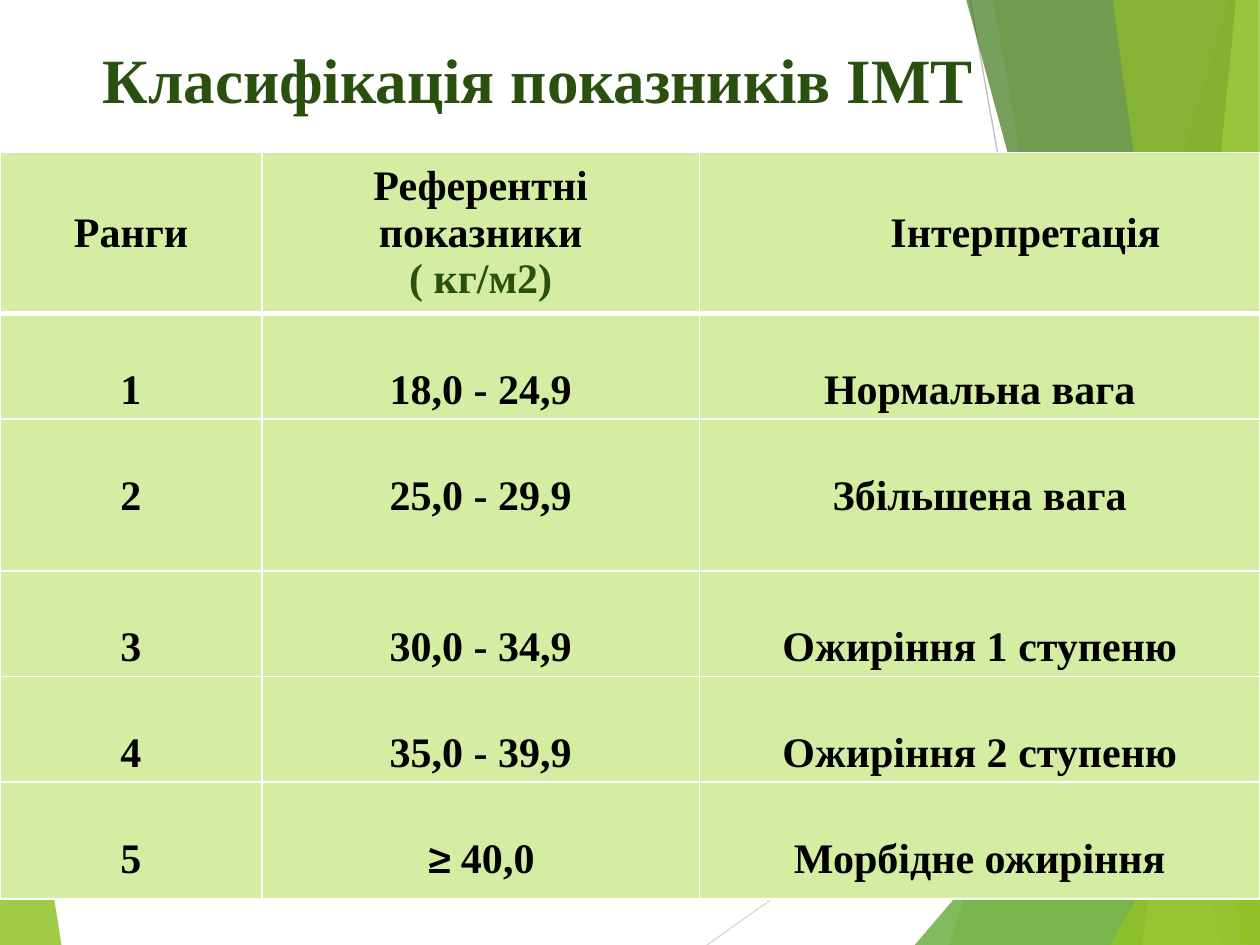
from lxml.etree import SubElement
from pptx import Presentation
from pptx.dml.color import RGBColor
from pptx.enum.shapes import MSO_CONNECTOR
from pptx.enum.text import MSO_ANCHOR, PP_ALIGN
from pptx.oxml.ns import qn
from pptx.util import Cm, Pt

# Content
TITLE = "Класифікація показників ІМТ"
ROWS = [
    ("Ранги", "Референтні показники\n( кг/м2)", "Інтерпретація"),
    ("1", "18,0 - 24,9", "Нормальна вага"),
    ("2", "25,0 - 29,9", "Збільшена вага"),
    ("3", "30,0 - 34,9", "Ожиріння 1 ступеню"),
    ("4", "35,0 - 39,9", "Ожиріння 2 ступеню"),
    ("5", "≥ 40,0", "Морбідне ожиріння"),
]

# Layout in centimetres
WIDTH, HEIGHT = 25.4, 19.05
TABLE_TOP = 3.07
COLUMN_WIDTHS = [5.28, 8.82, 11.3]
ROW_HEIGHTS = [3.06, 2.13, 3.06, 2.13, 2.13, 2.35]
FONT, DARK_GREEN, CELL_GREEN = "Times New Roman", "2A5010", "D5EDA2"

# Backdrop lines: colour, start, end
LINES = [
    ("D9D9D9", (14.25, HEIGHT), (WIDTH, 11.15)),
    ("BFBFBF", (19.56, 0), (22.96, HEIGHT)),
]
# Backdrop facets: colour, opacity in percent, corners
LOWER_RIGHT, UPPER_RIGHT = (WIDTH, HEIGHT), (WIDTH, 0)
LEFT_FACET = ("90C226", 85, [(0, 11.15), (1.24, HEIGHT), (0, HEIGHT)])
RIGHT_FACETS = [
    ("90C226", 30, [(24.77, 0), (19.15, HEIGHT), LOWER_RIGHT, UPPER_RIGHT]),
    ("90C226", 20, [(20.02, 0), (23.34, HEIGHT), LOWER_RIGHT, UPPER_RIGHT]),
    ("54A021", 72, [(18.44, HEIGHT), (WIDTH, 10.9), LOWER_RIGHT]),
    ("3F7819", 70, [(19.48, 0), (24.64, HEIGHT), LOWER_RIGHT, UPPER_RIGHT]),
    ("C0E474", 70, [(24.92, 0), (23.04, HEIGHT), LOWER_RIGHT, UPPER_RIGHT]),
    ("90C226", 65, [(22.43, 0), (25.04, HEIGHT), LOWER_RIGHT, (25.35, 0)]),
    ("90C226", 80, [(22.38, HEIGHT), (WIDTH, 13.59), LOWER_RIGHT]),
]


def color(value):
    return RGBColor.from_string(value)


def add_facet(page, fill, opacity, corners):
    points = [(round(x * 100), round(y * 100)) for x, y in corners]
    builder = page.shapes.build_freeform(*points[0], scale=Cm(0.01))
    builder.add_line_segments(points[1:], close=True)
    facet = builder.convert_to_shape()
    facet.shadow.inherit = False
    facet.line.fill.background()
    facet.fill.solid()
    facet.fill.fore_color.rgb = color(fill)
    tint = next(facet._element.spPr.iter(qn("a:srgbClr")))
    SubElement(tint, qn("a:alpha"), val=str(opacity * 1000))


def add_line(page, stroke, start, end):
    ends = [Cm(value) for value in start + end]
    line = page.shapes.add_connector(MSO_CONNECTOR.STRAIGHT, *ends)
    line.line.color.rgb = color(stroke)
    line.line.width = Pt(0.75)
    SubElement(line._element.spPr, qn("a:effectLst"))


def style_para(para, size, value):
    para.alignment = PP_ALIGN.CENTER
    para.font.name = FONT
    para.font.size = Pt(size)
    para.font.bold = True
    para.font.color.rgb = color(value)


def set_borders(cell, top, bottom):
    properties = cell._tc.get_or_add_tcPr()
    for side, width in (("L", 1), ("R", 1), ("T", top), ("B", bottom)):
        border = SubElement(properties, qn(f"a:ln{side}"), w=str(Pt(width)))
        SubElement(SubElement(border, qn("a:solidFill")),
                   qn("a:srgbClr"), val="FFFFFF")


def fill_cell(cell, text, row):
    set_borders(cell, 3 if row == 1 else 1, 3 if row == 0 else 1)
    cell.fill.solid()
    cell.fill.fore_color.rgb = color(CELL_GREEN)
    cell.vertical_anchor = MSO_ANCHOR.TOP if row else MSO_ANCHOR.MIDDLE
    cell.margin_top = Cm(1.08 if row else 0.1)
    cell.margin_bottom = Cm(0 if row else 0.1)
    cell.text = text
    for number, para in enumerate(cell.text_frame.paragraphs):
        style_para(para, 24, DARK_GREEN if number else "000000")


deck = Presentation()
deck.slide_width, deck.slide_height = Cm(WIDTH), Cm(HEIGHT)
page = deck.slides.add_slide(deck.slide_layouts[6])

# Backdrop
add_facet(page, *LEFT_FACET)
for line in LINES:
    add_line(page, *line)
for facet in RIGHT_FACETS:
    add_facet(page, *facet)

# Title
title_box = page.shapes.add_textbox(0, Cm(0.53), Cm(21.69), Cm(2.54))
title_frame = title_box.text_frame
title_frame.word_wrap = True
title_frame.margin_top = Cm(0.29)
title_frame.text = TITLE
style_para(title_frame.paragraphs[0], 36, DARK_GREEN)

# Table
table = page.shapes.add_table(
    len(ROWS), len(COLUMN_WIDTHS), 0, Cm(TABLE_TOP),
    Cm(WIDTH), Cm(sum(ROW_HEIGHTS))).table
for column, width in zip(table.columns, COLUMN_WIDTHS):
    column.width = Cm(width)
for row, (texts, height) in enumerate(zip(ROWS, ROW_HEIGHTS)):
    table.rows[row].height = Cm(height)
    for column, text in enumerate(texts):
        fill_cell(table.cell(row, column), text, row)

# The last heading sits right of centre
table.cell(0, 2).margin_left = Cm(2.1)

# The comparison sign has its own font
limit_para = table.cell(5, 1).text_frame.paragraphs[0]
sign, number = ROWS[5][1].split()
limit_para.runs[0].text = sign + " "
limit_para.runs[0].font.name = "Cambria"
limit_para.add_run().text = number

deck.save("out.pptx")
